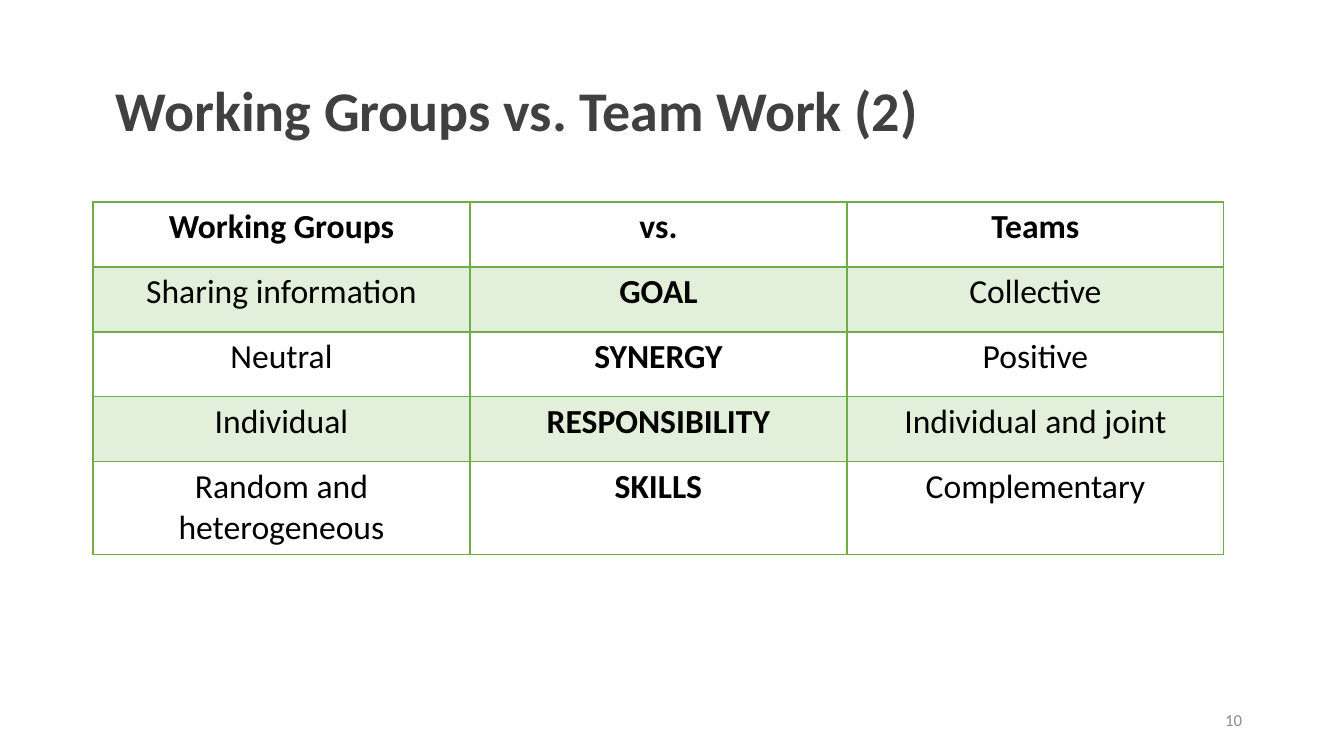
import pptx
import pptx.dml.color
import pptx.enum.text
import pptx.oxml
import pptx.oxml.ns
import pptx.util

RGB = pptx.dml.color.RGBColor
ALIGN = pptx.enum.text.PP_ALIGN
ANCHOR = pptx.enum.text.MSO_ANCHOR

BLACK = RGB(0x00, 0x00, 0x00)
WHITE = RGB(0xFF, 0xFF, 0xFF)
CHARCOAL = RGB(0x40, 0x40, 0x41)
GRAY = RGB(0x8C, 0x8C, 0x8C)
GREEN = RGB(0x70, 0xAD, 0x47)
PALE_GREEN = RGB(0xE2, 0xEF, 0xDA)

WIDTH, HEIGHT = 1344, 756
SCALE = 12192000 / WIDTH

ROWS = [
    ("Working Groups", "vs.", "Teams"),
    ("Sharing information", "GOAL", "Collective"),
    ("Neutral", "SYNERGY", "Positive"),
    ("Individual", "RESPONSIBILITY", "Individual and joint"),
    ("Random and heterogeneous", "SKILLS", "Complementary"),
]


def px(n):
    return pptx.util.Emu(round(n * SCALE))


class Deck:
    """Draws text and tables on the current slide in one style."""

    def __init__(self, font):
        self.font = font
        self.prs = pptx.Presentation()
        self.prs.slide_width, self.prs.slide_height = px(WIDTH), px(HEIGHT)
        self.s = self.prs.slides.add_slide(self.prs.slide_layouts[6])

    def style(self, p, size, color, bold, align):
        p.alignment = align
        for r in p.runs:
            r.font.name = self.font
            r.font.size = pptx.util.Pt(size)
            r.font.bold = bold
            r.font.color.rgb = color

    def text(self, box, text, size, color, bold=False, align=ALIGN.LEFT):
        sp = self.s.shapes.add_textbox(*map(px, box))
        tf = sp.text_frame
        tf.word_wrap = True
        tf.vertical_anchor = ANCHOR.MIDDLE
        tf.text = text
        p = tf.paragraphs[0]
        p.line_spacing = 0.9
        self.style(p, size, color, bold, align)

    def border(self, cell, side, points):
        ns = pptx.oxml.ns.nsdecls("a")
        cell._tc.get_or_add_tcPr().append(pptx.oxml.parse_xml(
            f'<a:ln{side} {ns} w="{pptx.util.Pt(points)}"><a:solidFill>'
            f'<a:srgbClr val="{GREEN}"/></a:solidFill></a:ln{side}>'))

    def table(self, left, top, col_width, heights, rows, size):
        box = (left, top, col_width * len(rows[0]), sum(heights))
        table = self.s.shapes.add_table(len(rows), len(rows[0]), *map(px, box)).table
        table.first_row = table.horz_banding = False
        for col in table.columns:
            col.width = px(col_width)
        for i, (values, height) in enumerate(zip(rows, heights)):
            table.rows[i].height = px(height)
            for j, value in enumerate(values):
                cell = table.cell(i, j)
                for side in "LRTB":
                    header_rule = (i, side) in ((0, "B"), (1, "T"))
                    self.border(cell, side, 2 if header_rule else 1)
                cell.fill.solid()
                cell.fill.fore_color.rgb = PALE_GREEN if i % 2 else WHITE
                cell.text_frame.text = value
                self.style(cell.text_frame.paragraphs[0], size, BLACK,
                           i == 0 or j == 1, ALIGN.CENTER)


def main():
    deck = Deck("Calibri")
    deck.text((106, 40, 1146, 146), "Working Groups vs. Team Work (2)",
              40, CHARCOAL, bold=True)
    deck.table(93, 202, 377, [65] * 4 + [93], ROWS, 24)
    deck.text((950, 701, 302, 40), "10", 12, GRAY, align=ALIGN.RIGHT)
    deck.prs.save("out.pptx")


if __name__ == "__main__":
    main()
